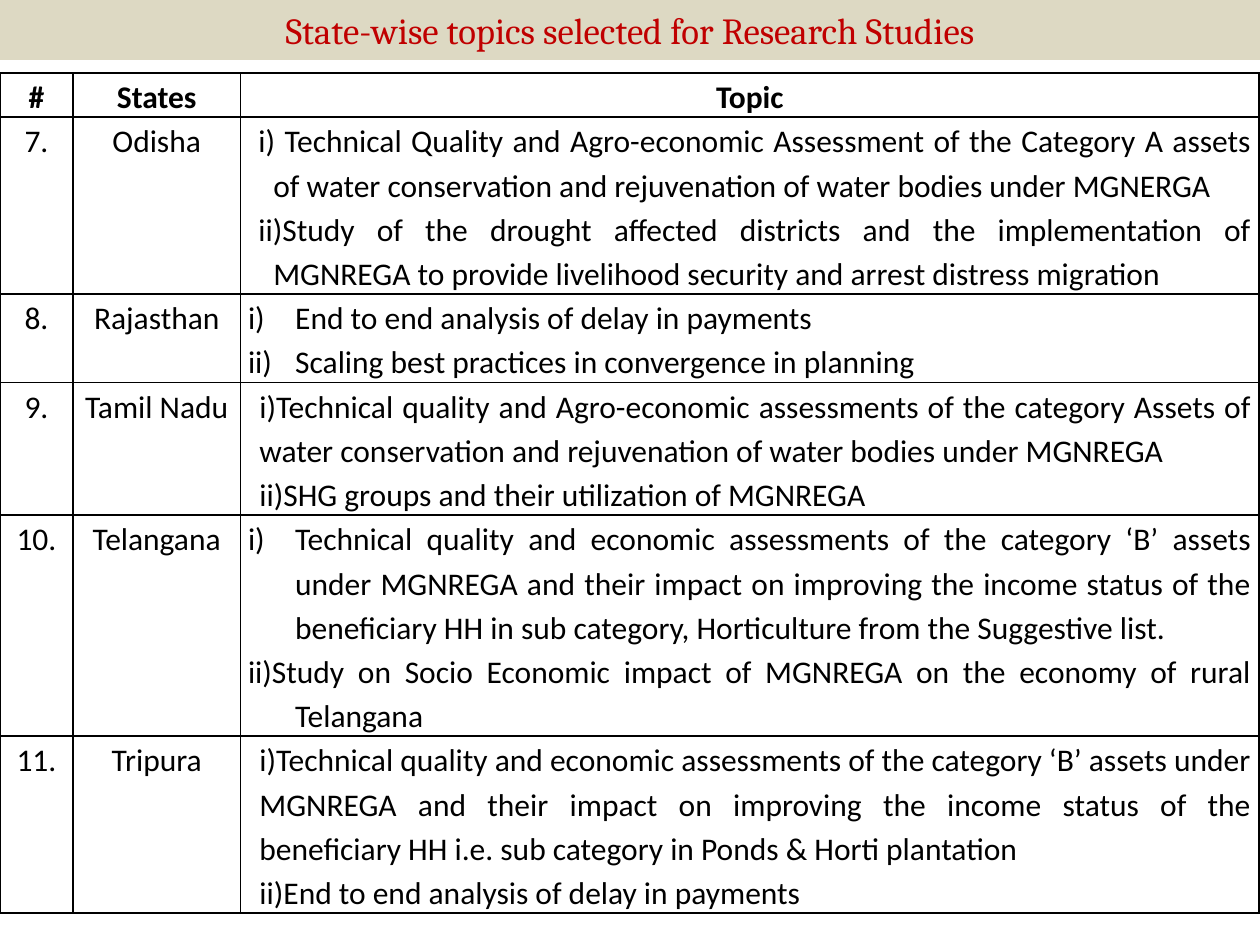
from lxml.etree import SubElement
from pptx import Presentation
from pptx.dml.color import RGBColor
from pptx.enum.shapes import MSO_SHAPE as Shape
from pptx.enum.text import MSO_ANCHOR as Anchor, PP_ALIGN as Align
from pptx.oxml import parse_xml
from pptx.oxml.ns import nsdecls, qn
from pptx.util import Cm, Pt

SAND = RGBColor(0xDD, 0xD9, 0xC3)
RED = RGBColor(0xC0, 0x00, 0x00)
BLACK = RGBColor(0x00, 0x00, 0x00)

# Left margin and first-line indent of the topic lists, in cm
HANGING = (0.51, -0.3)
NUMBERED = (0.95, -0.95)
BLOCK = (0.23, 0)

LINE_HEIGHT = 0.88
COLUMN_WIDTHS = (1.47, 3.38, 20.53)

# Number, state, lines of text, indents, topics as (text, automatic numeral)
STATES = [
    ("7.", "Odisha", 4, HANGING, [
        ("i) Technical Quality and Agro-economic Assessment of the Category A assets "
         "of water conservation and rejuvenation of water bodies under MGNERGA", False),
        ("ii)Study of the drought affected districts and the implementation of MGNREGA "
         "to provide livelihood security and arrest distress migration", False)]),
    ("8.", "Rajasthan", 2, NUMBERED, [
        ("End to end analysis of delay in payments", True),
        ("Scaling best practices in convergence in planning", True)]),
    ("9.", "Tamil Nadu", 3, BLOCK, [
        ("i)Technical quality and Agro-economic assessments of the category Assets of "
         "water conservation and rejuvenation of water bodies under MGNREGA", False),
        ("ii)SHG groups and their utilization of MGNREGA", False)]),
    ("10.", "Telangana", 5, NUMBERED, [
        ("Technical quality and economic assessments of the category ‘B’ assets under "
         "MGNREGA and their impact on improving the income status of the beneficiary HH "
         "in sub category, Horticulture from the Suggestive list.", True),
        ("ii)Study on Socio Economic impact of MGNREGA on the economy of rural "
         "Telangana", False)]),
    ("11.", "Tripura", 4, BLOCK, [
        ("i)Technical quality and economic assessments of the category ‘B’ assets under "
         "MGNREGA and their impact on improving the income status of the beneficiary HH "
         "i.e. sub category in Ponds & Horti plantation", False),
        ("ii)End to end analysis of delay in payments", False)]),
]


def write(paragraph, text, font="Calibri", size=18, color=BLACK, bold=False,
          align=Align.CENTER, spacing=1.15, after=10, indents=None, numeral=False):
    paragraph.alignment = align
    paragraph.line_spacing = spacing
    paragraph.space_after = Pt(after)
    run = paragraph.add_run()
    run.text = text
    run.font.name = font
    run.font.size = Pt(size)
    run.font.bold = bold
    run.font.color.rgb = color
    properties = paragraph._p.get_or_add_pPr()
    if indents:
        properties.set("marL", str(Cm(indents[0])))
        properties.set("indent", str(Cm(indents[1])))
    if numeral:
        SubElement(properties, qn("a:buFont"), typeface="+mj-lt")
        SubElement(properties, qn("a:buAutoNum"), type="romanLcParenR")


def format_cell(cell):
    cell.margin_left = cell.margin_right = Cm(0.15)
    cell.margin_top = cell.margin_bottom = 0
    cell.fill.background()
    properties = cell._tc.get_or_add_tcPr()
    for position, side in enumerate(("lnL", "lnR", "lnT", "lnB")):
        properties.insert(position, parse_xml(
            f'<a:{side} {nsdecls("a")} w="{Pt(1)}"><a:solidFill>'
            f'<a:srgbClr val="{BLACK}"/></a:solidFill></a:{side}>'))


presentation = Presentation()
presentation.slide_width = Cm(25.4)
presentation.slide_height = Cm(19.05)
slide = presentation.slides.add_slide(presentation.slide_layouts[6])

# Title band
band = slide.shapes.add_shape(Shape.RECTANGLE, 0, 0, Cm(25.4), Cm(1.21))
band.shadow.inherit = False
band.fill.solid()
band.fill.fore_color.rgb = SAND
band.line.fill.background()
band.text_frame.word_wrap = True
band.text_frame.vertical_anchor = Anchor.MIDDLE
write(band.text_frame.paragraphs[0], "State-wise topics selected for Research Studies",
      font="Cambria", size=21, color=RED, spacing=1.0, after=0)

# Table grid
line_counts = [1] + [state[2] for state in STATES]
table = slide.shapes.add_table(
    len(line_counts), len(COLUMN_WIDTHS), 0, Cm(1.47),
    Cm(sum(COLUMN_WIDTHS)), Cm(LINE_HEIGHT * sum(line_counts))).table
for column, width in zip(table.columns, COLUMN_WIDTHS):
    column.width = Cm(width)
for row, count in zip(table.rows, line_counts):
    row.height = Cm(LINE_HEIGHT * count)
for cell in table.iter_cells():
    format_cell(cell)

# Header row
for column, heading in enumerate(("#", "States", "Topic")):
    write(table.cell(0, column).text_frame.paragraphs[0], heading, bold=True)

# One row per state
for row, (number, state, _, indents, topics) in enumerate(STATES, start=1):
    write(table.cell(row, 0).text_frame.paragraphs[0], number)
    write(table.cell(row, 1).text_frame.paragraphs[0], state)
    frame = table.cell(row, 2).text_frame
    for index, (topic, numeral) in enumerate(topics):
        paragraph = frame.add_paragraph() if index else frame.paragraphs[0]
        last = index == len(topics) - 1
        write(paragraph, topic, align=Align.JUSTIFY, after=10 if last else 0,
              indents=indents, numeral=numeral)

presentation.save("out.pptx")
